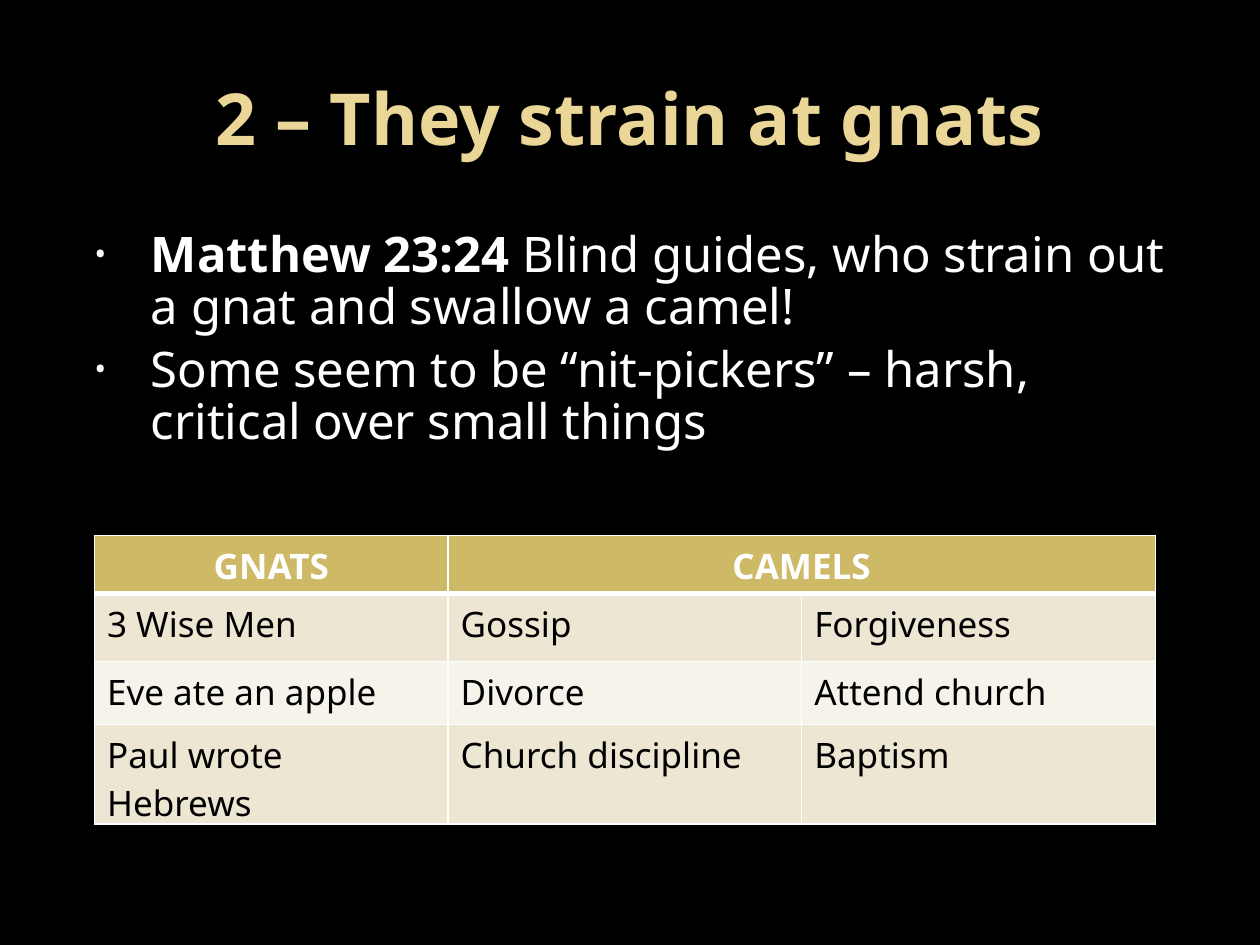
from lxml import etree
from pptx import Presentation, util as u
from pptx.dml.color import RGBColor
from pptx.enum import text as t
from pptx.oxml import ns

HUES = {"back": "000000", "title": "EAD696", "white": "FFFFFF", "dot": "F9F9F9",
        "head": "CEB966", "odd": "EDE6D3", "even": "F6F3EA", "ink": "000000"}
FONT = "Noto Sans"


def hue(name):
    """Return the named colour."""
    return RGBColor.from_string(HUES[name])


def add(node, tag, **attrs):
    """Append a drawing element and return it."""
    return etree.SubElement(node, ns.qn("a:" + tag), attrs)


def write(para, words, size=20, color="ink", bold=False, align=t.PP_ALIGN.LEFT):
    """Add a formatted run to a paragraph."""
    para.alignment = align
    run = para.add_run()
    run.text = words
    font = run.font
    font.name, font.size, font.bold = FONT, u.Pt(size), bold
    font.color.rgb = hue(color)


class Deck:
    """Hold the style and the current slide on a grid of 200 columns by 150 rows."""

    def __init__(self):
        """Start a deck with one dark blank slide."""
        self.prs = Presentation()
        self.prs.slide_width, self.prs.slide_height = u.Inches(10), u.Inches(7.5)
        self.slide = self.prs.slides.add_slide(self.prs.slide_layouts[6])
        fill = self.slide.background.fill
        fill.solid()
        fill.fore_color.rgb = hue("back")

    def grid(self, *cells):
        """Turn grid units into lengths."""
        unit = self.prs.slide_width / 200
        return [u.Emu(round(n * unit)) for n in cells]

    def box(self, *place, anchor=t.MSO_ANCHOR.TOP):
        """Add a wrapping text box and return its frame."""
        frame = self.slide.shapes.add_textbox(*self.grid(*place)).text_frame
        frame.word_wrap = True
        frame.vertical_anchor = anchor
        return frame

    def title(self, words, *place):
        """Add the centred heading."""
        frame = self.box(*place, anchor=t.MSO_ANCHOR.MIDDLE)
        write(frame.paragraphs[0], words, 41, "title", True, t.PP_ALIGN.CENTER)

    def points(self, items, *place):
        """Add bulleted paragraphs, each with an optional bold lead."""
        frame = self.box(*place)
        frame.margin_top = u.Inches(0.08)
        for i, (lead, rest) in enumerate(items):
            para = frame.add_paragraph() if i else frame.paragraphs[0]
            para.line_spacing = 0.89
            para.space_before = u.Pt(5.6 if i else 0)
            props = para._p.get_or_add_pPr()
            props.set("marL", str(u.Inches(0.6)))
            props.set("indent", str(u.Inches(-0.45)))
            add(add(props, "buClr"), "srgbClr", val=HUES["dot"])
            add(props, "buSzPct", val="65000")
            add(props, "buFont", typeface=FONT)
            add(props, "buChar", char="•")
            if lead:
                write(para, lead, 28, "white", True)
            write(para, rest, 28, "white")

    def edge(self, cell, base):
        """Draw white borders round a cell, with the given base width."""
        props = cell._tc.get_or_add_tcPr()
        for i, (side, width) in enumerate(zip("LRTB", (1, 1, 1, base))):
            line = etree.Element(ns.qn("a:ln" + side), w=str(u.Pt(width)))
            add(add(line, "solidFill"), "srgbClr", val=HUES["white"])
            props.insert(i, line)

    def table(self, data, left, top, wide, highs):
        """Add a table whose last heading spans the remaining columns."""
        count = len(data[0])
        place = self.grid(left, top, wide, sum(highs))
        table = self.slide.shapes.add_table(len(data), count, *place).table
        for r, (high, words) in enumerate(zip(highs, data)):
            table.rows[r].height = self.grid(high)[0]
            look = {"color": "white", "bold": True, "align": t.PP_ALIGN.CENTER} if r == 0 else {}
            for c, word in enumerate(words):
                cell = table.cell(r, c)
                cell.fill.solid()
                cell.fill.fore_color.rgb = hue("head" if r == 0 else ("even", "odd")[r % 2])
                self.edge(cell, 1 if r else 3)
                if word:
                    write(cell.text_frame.paragraphs[0], word, **look)
        table.cell(0, 1).merge(table.cell(0, count - 1))


def main():
    """Build and save the slide."""
    deck = Deck()
    deck.title("2 – They strain at gnats", 10, 6, 180, 25)
    deck.points([
        ("Matthew 23:24 ", "Blind guides, who strain out a gnat and swallow a camel!"),
        ("", "Some seem to be “nit-pickers” – harsh, critical over small things"),
    ], 10, 35, 180, 103)
    deck.table([
        ("GNATS", "CAMELS", ""),
        ("3 Wise Men", "Gossip", "Forgiveness"),
        ("Eve ate an apple", "Divorce", "Attend church"),
        ("Paul wrote Hebrews", "Church discipline", "Baptism"),
    ], 15, 85, 168.4, (9.2, 10.8, 10, 15.8))
    deck.prs.save("out.pptx")


if __name__ == "__main__":
    main()
